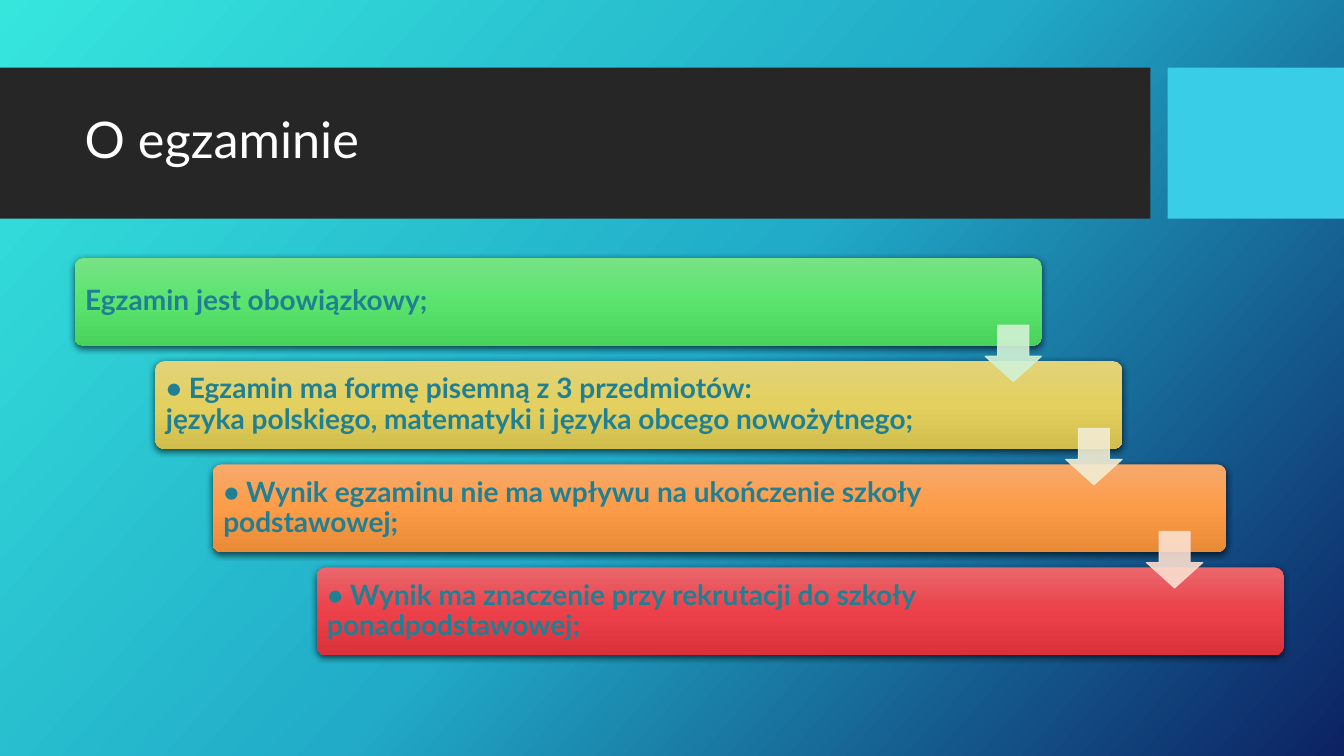
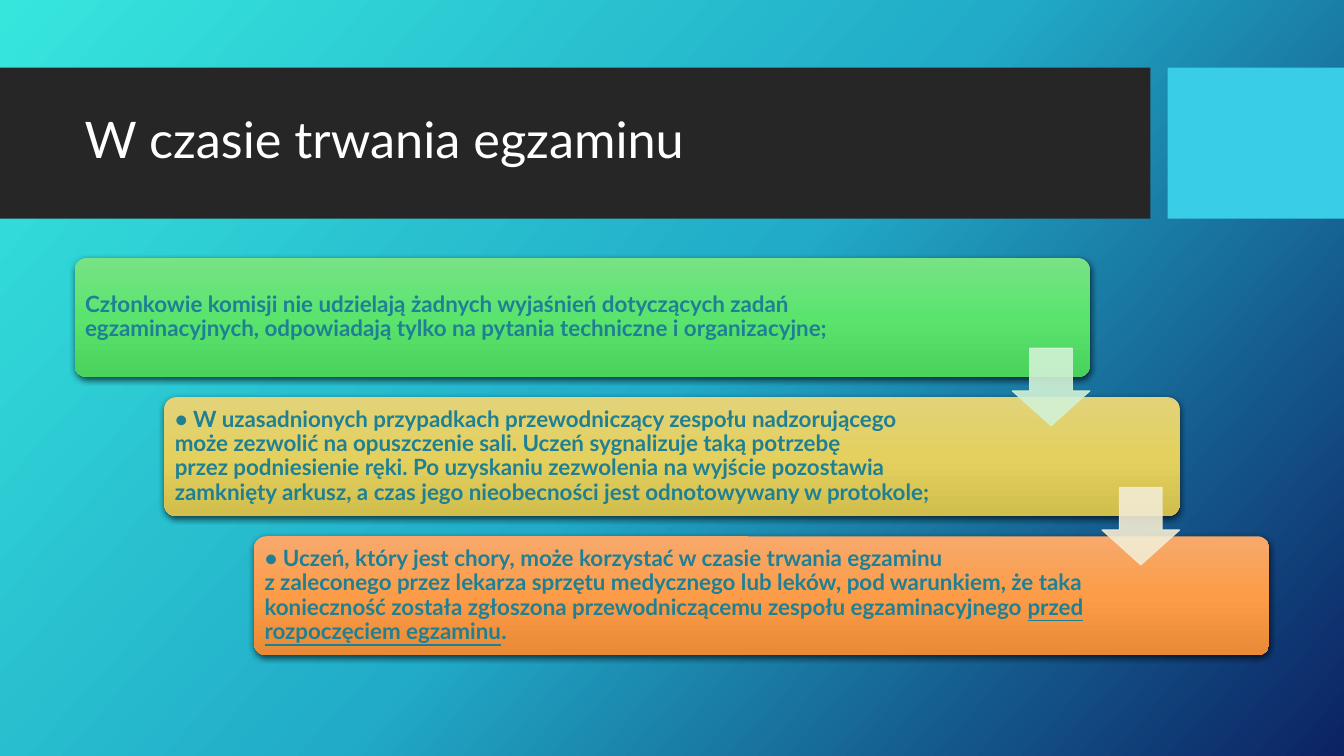
from copy import deepcopy

from lxml import etree
from pptx import Presentation
from pptx import util as u
from pptx.dml.color import RGBColor
from pptx.enum import shapes, text
from pptx.oxml.ns import qn

COLOURS = {
    "band": "262626",
    "accent": "39CDE7",
    "title": "FFFFFF",
    "body": "1F8094",
    "shadow": "000000",
}
BACKGROUND = ["36E6DD", "21ABC8", "0C2263"]
STEP_GRADIENTS = [
    ["77E385", "5AE46E", "49D25C"],
    ["E2D37A", "E3D05E", "D1BE4D"],
    ["F7A96C", "FC9C48", "E98B36"],
    ["E9676C", "EC414A", "DA313A"],
]
ARROW_COLOURS = ["D2F2D5", "F2ECD3", "FBDFD0"]
STEPS_LEFT, STEPS_TOP, STEPS_HEIGHT = 0.74, 2.56, 3.94

SLIDES = [
    {
        "title": "O egzaminie",
        "size": 20, "inset": 0.08, "width": 9.59, "height": 0.87, "shift": 0.8, "arrow": 0.56,
        "steps": [
            ("Egzamin jest obowiązkowy;", 1.03, 0),
            ("• Egzamin ma formę pisemną z 3 przedmiotów:\n"
             "języka polskiego, matematyki i języka obcego nowożytnego;", 1.44, 0),
            ("• Wynik egzaminu nie ma wpływu na ukończenie szkoły\npodstawowej;", 1.5, 0.46),
            ("• Wynik ma znaczenie przy rekrutacji do szkoły\nponadpodstawowej;", 1.44, 0),
        ],
    },
    {
        "title": "W czasie trwania egzaminu",
        "size": 16, "inset": 0.07, "width": 10.07, "height": 1.18, "shift": 0.89, "arrow": 0.77,
        "steps": [
            ("Członkowie komisji nie udzielają żadnych wyjaśnień dotyczących zadań "
             "egzaminacyjnych, odpowiadają tylko na pytania techniczne i organizacyjne;", 1.28, 0),
            ("• W uzasadnionych przypadkach przewodniczący zespołu nadzorującego\n"
             "może zezwolić na opuszczenie sali. Uczeń sygnalizuje taką potrzebę\n"
             "przez podniesienie ręki. Po uzyskaniu zezwolenia na wyjście pozostawia\n"
             "zamknięty arkusz, a czas jego nieobecności jest odnotowywany w protokole;", 1.73, 0),
            ("• Uczeń, który jest chory, może korzystać w czasie trwania egzaminu\n"
             "z zaleconego przez lekarza sprzętu medycznego lub leków, pod warunkiem, że taka "
             "konieczność została zgłoszona przewodniczącemu zespołu egzaminacyjnego "
             "_przed rozpoczęciem egzaminu_.", 1.73, 0),
        ],
    },
]


def write_text(shape, content, size, colour, bold=False, inset=0.1, right=0.1):
    frame = shape.text_frame
    frame.word_wrap = True
    frame.auto_size = text.MSO_AUTO_SIZE.NONE
    frame.vertical_anchor = text.MSO_ANCHOR.MIDDLE
    frame.margin_left = frame.margin_top = frame.margin_bottom = u.Inches(inset)
    frame.margin_right = u.Inches(right)
    paragraph = frame.paragraphs[0]
    paragraph.alignment = text.PP_ALIGN.LEFT
    paragraph.line_spacing = 0.9
    for line_number, line in enumerate(content.split("\n")):
        if line_number:
            paragraph.add_line_break()
        for part_number, part in enumerate(line.split("_")):
            run = paragraph.add_run()
            run.text = part
            run.font.name = "Lato"
            run.font.size = u.Pt(size)
            run.font.bold = bold
            run.font.color.rgb = RGBColor.from_string(colour)
            if part_number % 2:
                run.font.underline = True
    for line_break in paragraph._p.findall(qn("a:br")):
        line_break.append(deepcopy(paragraph.runs[0]._r.get_or_add_rPr()))


def fill_gradient(fill, element, colours, clockwise_angle):
    fill.gradient()
    fill.gradient_angle = 360 - clockwise_angle
    stop_list = element.find(".//" + qn("a:gsLst"))
    stop_list.append(deepcopy(stop_list[0]))
    for stop, position, colour in zip(fill.gradient_stops, (0, 0.5, 1), colours):
        stop.position = position
        stop.color.rgb = RGBColor.from_string(colour)


presentation = Presentation()
presentation.slide_width = u.Inches(13.33)
presentation.slide_height = u.Inches(7.5)
layout = presentation.slide_layouts[5]
fill_gradient(layout.background.fill, layout.element, BACKGROUND, 42)

title = layout.placeholders[0]
title.left, title.top = u.Inches(0.74), u.Inches(0.82)
title.width, title.height = u.Inches(10.51), u.Inches(1.18)

slides = [presentation.slides.add_slide(layout) for _ in SLIDES]

bands = [(0, 11.41, "band"), (11.58, 1.75, "accent")]
for number, (left, width, colour) in enumerate(bands):
    band = slides[0].shapes.add_shape(
        shapes.MSO_SHAPE.RECTANGLE, u.Inches(left), u.Inches(0.67), u.Inches(width), u.Inches(1.5))
    band.shadow.inherit = False
    band.fill.solid()
    band.fill.fore_color.rgb = RGBColor.from_string(COLOURS[colour])
    band.line.fill.background()
    band.element.nvSpPr.cNvPr.set("id", str(20 + number))
    layout.shapes._spTree.insert(2, band.element)

for slide, content in zip(slides, SLIDES):
    write_text(slide.shapes.title, content["title"], 36, COLOURS["title"])
    steps, width, height = content["steps"], content["width"], content["height"]
    pitch = (STEPS_HEIGHT - height) / (len(steps) - 1)

    for number, (wording, right, extra) in enumerate(steps):
        step = slide.shapes.add_shape(
            shapes.MSO_SHAPE.ROUNDED_RECTANGLE,
            u.Inches(STEPS_LEFT + number * content["shift"] - extra / 2),
            u.Inches(STEPS_TOP + number * pitch),
            u.Inches(width + extra), u.Inches(height))
        step.adjustments[0] = 0.1
        fill_gradient(step.fill, step.element, STEP_GRADIENTS[number], 90)
        step.line.fill.background()
        step.shadow.inherit = False
        effects = step.element.spPr.find(qn("a:effectLst"))
        shadow = etree.SubElement(
            effects, qn("a:outerShdw"), blurRad=str(u.Pt(4.5)), dist=str(u.Pt(1.5)),
            dir="5400000", algn="ctr", rotWithShape="0")
        shadow_colour = etree.SubElement(shadow, qn("a:srgbClr"), val=COLOURS["shadow"])
        etree.SubElement(shadow_colour, qn("a:alpha"), val="63000")
        write_text(step, wording, content["size"], COLOURS["body"], bold=True,
                   inset=content["inset"], right=right)

    arrow_size = content["arrow"]
    for number in range(len(steps) - 1):
        gap_middle = STEPS_TOP + number * pitch + (height + pitch) / 2
        arrow = slide.shapes.add_shape(
            shapes.MSO_SHAPE.DOWN_ARROW,
            u.Inches(STEPS_LEFT + width + number * content["shift"] - arrow_size),
            u.Inches(gap_middle - arrow_size / 2),
            u.Inches(arrow_size), u.Inches(arrow_size))
        arrow.adjustments[0], arrow.adjustments[1] = 0.55, 0.45
        arrow.shadow.inherit = False
        arrow.line.width = u.Pt(0.75)
        for fill in (arrow.fill, arrow.line.fill):
            fill.solid()
            fill.fore_color.rgb = RGBColor.from_string(ARROW_COLOURS[number])
        for colour in arrow.element.spPr.iter(qn("a:srgbClr")):
            etree.SubElement(colour, qn("a:alpha"), val="90000")

presentation.save("out.pptx")
